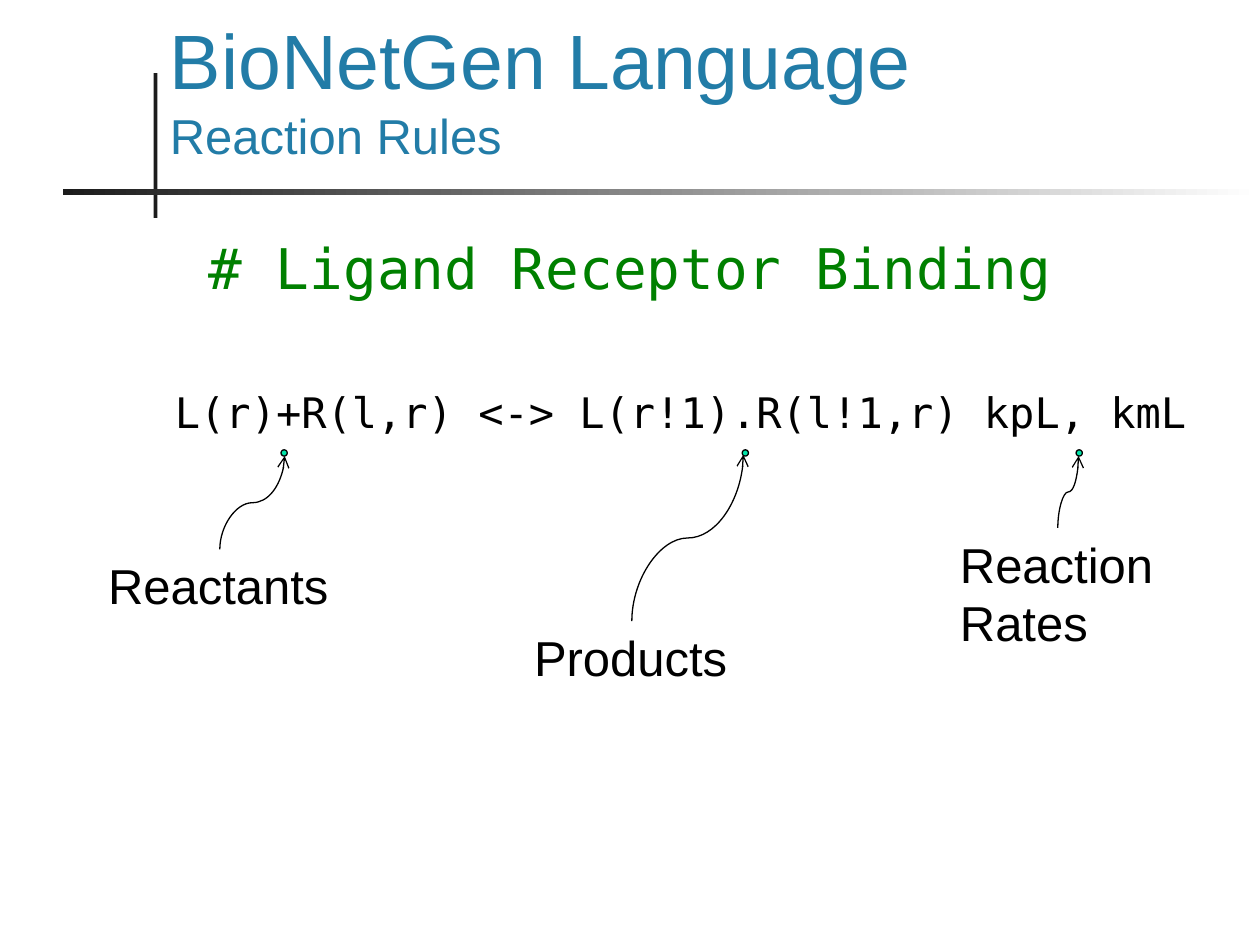
"""Build a slide that labels the parts of a BioNetGen reaction rule."""
from lxml import etree
from pptx import Presentation, util as u
from pptx.dml.color import RGBColor
from pptx.enum import shapes, text
from pptx.oxml.ns import qn

COLORS = {"ink": "1C1C1C", "paper": "FFFFFF", "title": "227CA7",
          "comment": "008000", "text": "000000", "dot": "00E4A8"}
COLORS = {role: RGBColor.from_string(value) for role, value in COLORS.items()}

deck = Presentation()
deck.slide_width, deck.slide_height = u.Inches(10), u.Inches(7.5)
column, row = deck.slide_width / 100, deck.slide_height / 75
slide = deck.slides.add_slide(deck.slide_layouts[6])


def grid(left, top, width, height):
    return [round(n * step) for n, step in zip((left, top, width, height), (column, row) * 2)]


def style(run, size, color, font="Arial"):
    run.font.size, run.font.name = u.Pt(size), font
    run.font.color.rgb = COLORS[color]


upright = slide.shapes.add_shape(shapes.MSO_SHAPE.RECTANGLE, *grid(12.2, 5.8, 0.3, 11.5))
upright.fill.solid()
upright.fill.fore_color.rgb = COLORS["ink"]
rule = slide.shapes.add_shape(shapes.MSO_SHAPE.RECTANGLE, *grid(5, 15, 95, 0.5))
rule.fill.gradient()
rule.fill.gradient_angle = 0
for stop, position, color in zip(rule.fill.gradient_stops, (0, 1), ("ink", "paper")):
    stop.position, stop.color.rgb = position, COLORS[color]
for bar in (upright, rule):
    bar.line.fill.background()
    bar.shadow.inherit = False

heading = slide.shapes.add_textbox(*grid(12.5, 1, 85.2, 12.5)).text_frame
heading.word_wrap = True
heading.vertical_anchor = text.MSO_ANCHOR.BOTTOM
heading.text = "BioNetGen Language\vReaction Rules"
for run, size in zip(heading.paragraphs[0].runs, (44, 28)):
    style(run, size, "title")

code = slide.shapes.add_textbox(*grid(12.9, 18, 85, 49.1)).text_frame
code.word_wrap = True
code.text = "# Ligand Receptor Binding\nL(r)+R(l,r) <-> L(r!1).R(l!1,r) kpL, kmL"
comment, reaction = code.paragraphs
comment._p.get_or_add_pPr().set("marL", str(round(2.67 * column)))
reaction.space_before = u.Pt(49.5)
style(comment.runs[0], 32, "comment", "DejaVu Sans Mono")
style(reaction.runs[0], 24, "text", "DejaVu Sans Mono")

parts = [("Reactants", (7.6, 43.6, 19.7, 5.7), 22.3, 22.6, 36.2),
         ("Products", (41.4, 49.3, 17.5, 5.7), 58.9, 59, 36.1),
         ("Reaction\nRates", (75.2, 41.9, 17.5, 10.4), 85.4, 85.6, 36.2)]
for caption, box, dot_left, tip_x, tip_y in parts:
    label = slide.shapes.add_textbox(*grid(*box)).text_frame
    label.word_wrap = False
    label.text = caption
    for paragraph in label.paragraphs:
        style(paragraph.runs[0], 28, "text")

    dot = slide.shapes.add_shape(shapes.MSO_SHAPE.OVAL, *grid(dot_left, 35.7, 0.5, 0.5))
    dot.shadow.inherit = False
    dot.fill.solid()
    dot.fill.fore_color.rgb = COLORS["dot"]

    tail_x, tail_y = box[0] + box[2] / 2, box[1]
    middle_x, middle_y = (tail_x + tip_x) / 2, (tail_y + tip_y) / 2
    half_rise, half_run = (tail_y - tip_y) / 2, (tip_x - tail_x) / 2
    arrow = slide.shapes.add_connector(
        shapes.MSO_CONNECTOR.CURVE,
        *grid(middle_x + half_rise, middle_y + half_run, middle_x - half_rise, middle_y - half_run))
    properties = arrow._element.spPr
    properties.find(qn("a:xfrm")).set("rot", "5400000")
    for outline in (dot.line, arrow.line):
        outline.color.rgb, outline.width = COLORS["text"], u.Pt(0.75)
    etree.SubElement(properties.find(qn("a:ln")), qn("a:tailEnd"), type="arrow")
    etree.SubElement(properties, qn("a:effectLst"))

deck.save("out.pptx")
